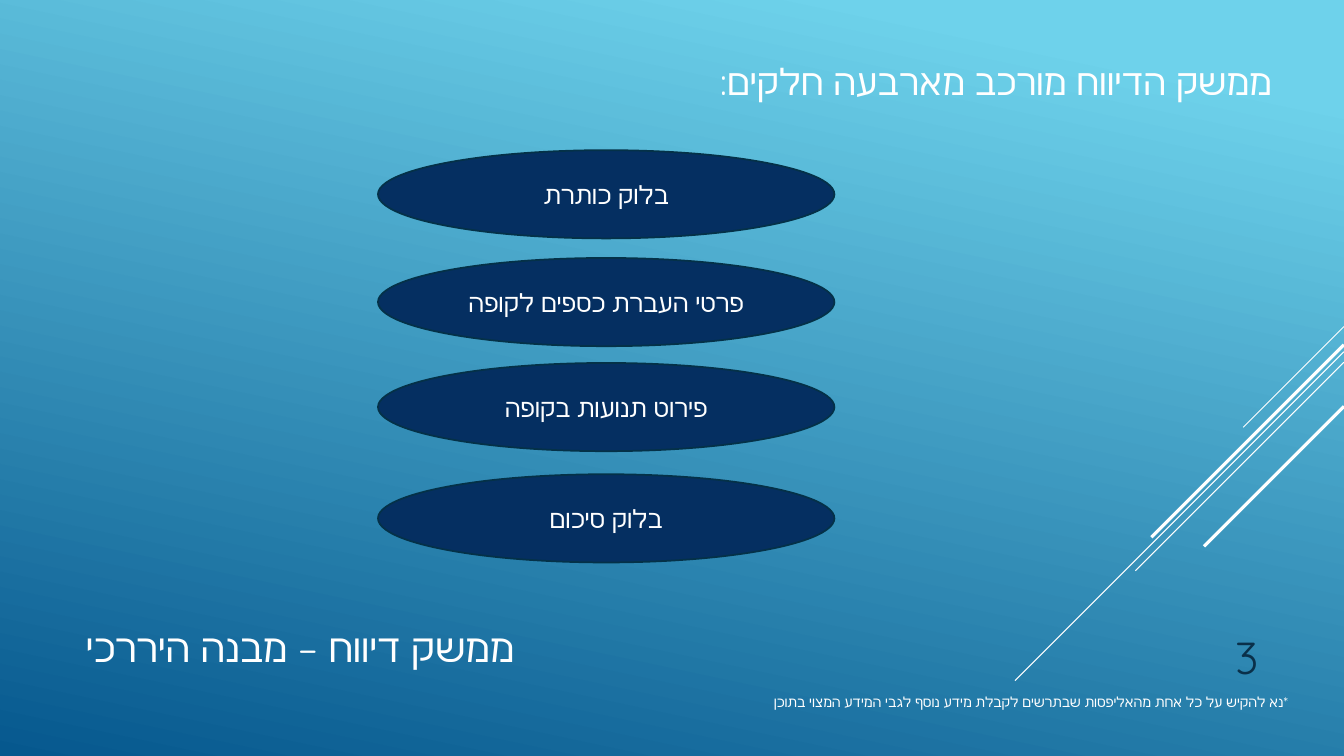
from dataclasses import dataclass

from lxml import etree
from pptx import Presentation
from pptx.dml.color import RGBColor
from pptx.enum import shapes, text
from pptx.oxml.ns import qn
from pptx.util import Pt


@dataclass(frozen=True)
class Theme:
    font: str = "Quicksand"
    white: str = "FFFFFF"
    sky: str = "6ED2EB"
    ocean: str = "06588E"
    navy: str = "052F61"
    outline: str = "043148"
    number: str = "0A304A"
    title_size: int = 28
    heading_size: int = 26
    block_size: int = 18
    note_size: int = 10
    number_size: int = 32


THEME = Theme()
WIDTH, HEIGHT = 960, 540
LEFT, CENTER, RIGHT = text.PP_ALIGN.LEFT, text.PP_ALIGN.CENTER, text.PP_ALIGN.RIGHT
MIDDLE, TOP, BOTTOM = text.MSO_ANCHOR.MIDDLE, text.MSO_ANCHOR.TOP, text.MSO_ANCHOR.BOTTOM
FIXED, GROW = text.MSO_AUTO_SIZE.NONE, text.MSO_AUTO_SIZE.SHAPE_TO_FIT_TEXT


def color(value):
    return RGBColor.from_string(value)


def apply_format(target, values):
    for name, value in values.items():
        setattr(target, name, value)


def write_text(shape, words, size, ink=THEME.white, align=RIGHT, anchor=TOP, fit=FIXED):
    """Fill a shape with one right-to-left paragraph."""
    frame = shape.text_frame
    apply_format(frame, {"word_wrap": True, "auto_size": fit, "vertical_anchor": anchor})
    paragraph = frame.paragraphs[0]
    paragraph.alignment = align
    paragraph._p.get_or_add_pPr().set("rtl", "1")
    run = paragraph.add_run()
    run.text = words
    apply_format(run.font, {"name": THEME.font, "size": Pt(size)})
    run.font.color.rgb = color(ink)
    # Hebrew takes the complex-script font
    properties = run._r.get_or_add_rPr()
    etree.SubElement(properties, qn("a:cs")).set("typeface", THEME.font)


def paint_background(slide):
    fill = slide.background.fill
    fill.gradient()
    fill.gradient_angle = 360 - 102
    stops = ((0.1, THEME.sky), (1, THEME.ocean))
    for stop, (position, value) in zip(fill.gradient_stops, stops):
        stop.position = position
        stop.color.rgb = color(value)


def add_rays(slide, box):
    """Diagonal lines at 45 degrees, running down from the right edge of the box."""
    left, top, width, height = box
    right = left + width
    rays = ((0, 72, 0.75), (18, 235, 0.75), (25.5, 149, 0.75),
            (13, 137.5, 2.25), (57, 100, 2.25))
    for drop, reach, weight in rays:
        start = top + drop
        ray = slide.shapes.add_connector(
            shapes.MSO_CONNECTOR.STRAIGHT,
            Pt(right), Pt(start), Pt(right - reach), Pt(start + reach))
        ray.line.color.rgb = color(THEME.white)
        ray.line.width = Pt(weight)
        etree.SubElement(ray._element.spPr, qn("a:effectLst"))


def add_title(slide, box, words):
    title = slide.shapes.title
    apply_format(title, dict(zip(("left", "top", "width", "height"), map(Pt, box))))
    write_text(title, words, THEME.title_size, align=LEFT, anchor=MIDDLE)


def add_blocks(slide, box, blocks):
    """Stacked ellipses, each at its own drop below the top of the box."""
    left, top, width, _ = box
    for drop, words in blocks:
        ellipse = slide.shapes.add_shape(
            shapes.MSO_SHAPE.OVAL, Pt(left), Pt(top + drop), Pt(width), Pt(63))
        ellipse.shadow.inherit = False
        ellipse.fill.solid()
        ellipse.fill.fore_color.rgb = color(THEME.navy)
        ellipse.line.color.rgb = color(THEME.outline)
        ellipse.line.width = Pt(1.25)
        write_text(ellipse, words, THEME.block_size, align=CENTER, anchor=MIDDLE)


def add_label(slide, box, words, size, **options):
    label = slide.shapes.add_textbox(*map(Pt, box))
    write_text(label, words, size, **options)


def build_structure_slide(presentation):
    slide = presentation.slides.add_slide(presentation.slide_layouts[5])
    paint_background(slide)
    add_rays(slide, (725, 233.25, WIDTH - 725, 253))

    # Title and the four parts
    add_title(slide, (54, 402.5, 672, 119), "ממשק דיווח – מבנה היררכי")
    add_blocks(slide, (270, 107.25, 326, 294.5), (
        (0, "בלוק כותרת"),
        (77, "פרטי העברת כספים לקופה"),
        (152, "פירוט תנועות בקופה"),
        (231.5, "בלוק סיכום"),
    ))

    # Heading, footnote and slide number
    add_label(slide, (483, 38.5, 433, 39), "ממשק הדיווח מורכב מארבעה חלקים:",
              THEME.heading_size, fit=GROW)
    add_label(slide, (458, 492, 469, 19.5),
              "*נא להקיש על כל אחת מהאליפסות שבתרשים לקבלת מידע נוסף לגבי המידע המצוי בתוכן",
              THEME.note_size, fit=GROW)
    add_label(slide, (816, 439, 90, 52.5), "3", THEME.number_size,
              ink=THEME.number, anchor=BOTTOM)


def main():
    presentation = Presentation()
    apply_format(presentation, {"slide_width": Pt(WIDTH), "slide_height": Pt(HEIGHT)})
    build_structure_slide(presentation)
    presentation.save("out.pptx")


if __name__ == "__main__":
    main()
